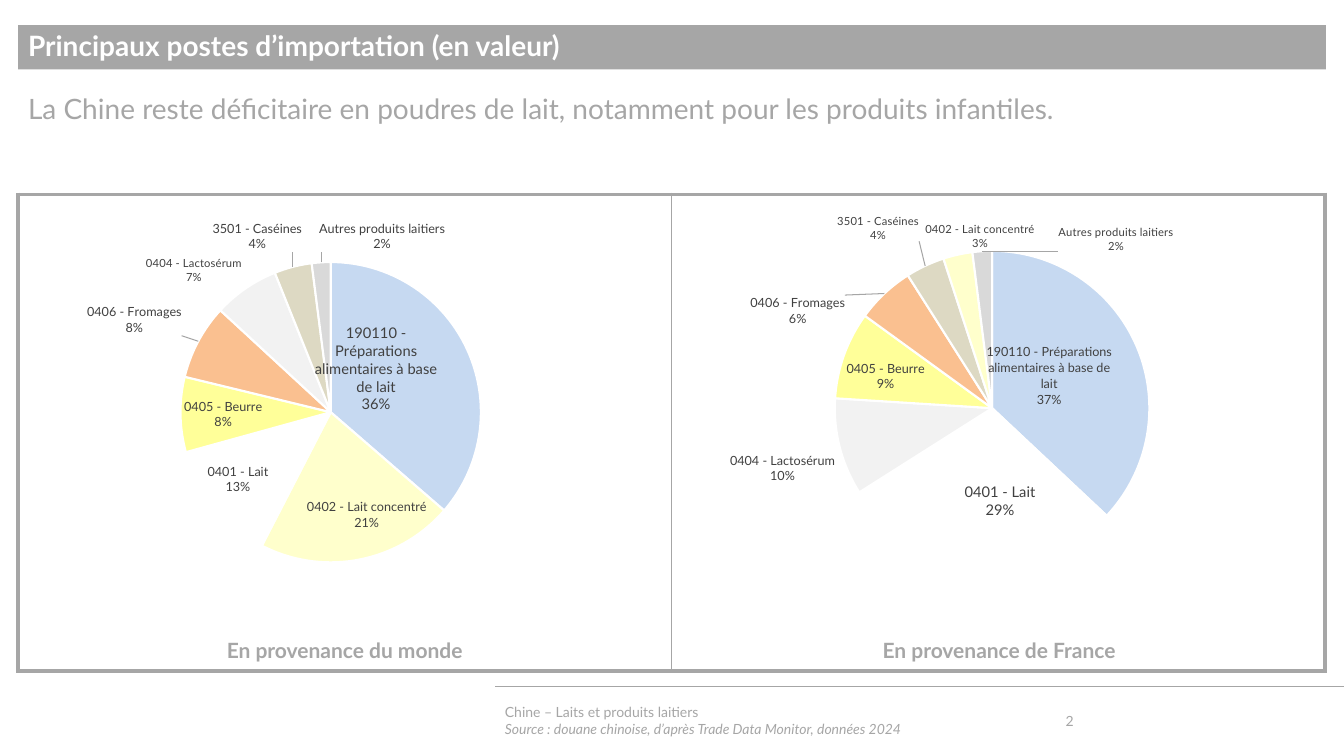
from dataclasses import dataclass
from itertools import accumulate
from math import copysign, cos, pi, sin
from typing import Optional

from pptx import Presentation
from pptx.chart.data import CategoryChartData
from pptx.dml.color import RGBColor
from pptx.enum.chart import XL_CHART_TYPE as ChartType
from pptx.enum.shapes import MSO_CONNECTOR as Connector, MSO_SHAPE as Shape
from pptx.enum.text import MSO_ANCHOR as Anchor, PP_ALIGN as Align
from pptx.oxml import parse_xml
from pptx.oxml.ns import nsdecls, qn
from pptx.util import Inches, Pt

FONT = "Lato"
COLORS = {
    "grey": "A6A6A6", "white": "FFFFFF", "black": "000000", "label": "404040",
    "infant": "C6D9F1", "condensed": "FFFFCC", "milk": "FFFFFF", "butter": "FFFF99",
    "cheese": "FAC090", "whey": "F2F2F2", "casein": "DDD9C3", "other": "D9D9D9",
}
PRODUCTS = {
    "infant": "190110 - Préparations alimentaires à base de lait",
    "condensed": "0402 - Lait concentré", "milk": "0401 - Lait",
    "butter": "0405 - Beurre", "cheese": "0406 - Fromages",
    "whey": "0404 - Lactosérum", "casein": "3501 - Caséines",
    "other": "Autres produits laitiers",
}
LABEL_GAP = 0.06  # between the pie and a label in its default place


@dataclass
class Label:
    """Centre on the slide and width in inches."""
    x: float
    y: float
    width: float
    size: float = 9
    lines: int = 2


@dataclass
class Slice:
    product: str
    value: float
    label: Optional[Label] = None


@dataclass
class Pie:
    left: float
    top: float
    width: float
    height: float
    x: float
    y: float
    radius: float
    slices: list[Slice]


WORLD = Pie(0.19, 1.93, 6.47, 4.16, 3.28, 4.09, 1.49, [
    Slice("infant", 0.36, Label(3.73, 3.66, 1.21, 10.5, 5)),
    Slice("condensed", 0.21, Label(3.64, 5.1, 1.19)),
    Slice("milk", 0.13, Label(2.36, 4.75, 0.6)),
    Slice("butter", 0.08, Label(2.21, 4.11, 0.78)),
    Slice("cheese", 0.08, Label(1.33, 3.18, 0.94)),
    Slice("whey", 0.07),
    Slice("casein", 0.04, Label(2.55, 2.35, 0.89)),
    Slice("other", 0.02, Label(3.79, 2.35, 1.25)),
])
FRANCE = Pie(6.66, 2.03, 6.48, 4.16, 9.84, 4.05, 1.56, [
    Slice("infant", 0.37, Label(10.4, 3.74, 1.23, lines=4)),
    Slice("milk", 0.29, Label(9.89, 4.97, 0.76, 10.5)),
    Slice("whey", 0.1, Label(7.76, 4.64, 1.04)),
    Slice("butter", 0.09, Label(8.78, 3.74, 0.78)),
    Slice("cheese", 0.06, Label(7.91, 3.09, 0.94)),
    Slice("casein", 0.04, Label(8.71, 2.26, 0.81, 8)),
    Slice("condensed", 0.03, Label(9.72, 2.34, 1.09, 8)),
    Slice("other", 0.02, Label(11.07, 2.37, 1.18, 8)),
])


def rgb(name: str) -> RGBColor:
    return RGBColor.from_string(COLORS[name])


def write(s, lines: list[str], size: float, color="grey", bold=False,
          align=Align.LEFT, anchor=Anchor.TOP, spacing=1.0):
    tf = s.text_frame
    tf.word_wrap = True
    tf.vertical_anchor = anchor
    tf.text = "\n".join(lines)
    for p in tf.paragraphs:
        p.alignment, p.line_spacing = align, spacing
        for r in p.runs:
            r.font.name, r.font.size, r.font.bold = FONT, Pt(size), bold
            r.font.color.rgb = rgb(color)
    return tf


def add_text(slide, box: tuple, lines: list[str], size: float, **style):
    return write(slide.shapes.add_textbox(*map(Inches, box)), lines, size, **style)


def set_borders(cell, widths: dict[str, float]):
    for side, width in widths.items():
        cell._tc.get_or_add_tcPr().append(parse_xml(
            f'<a:{side} {nsdecls("a")} w="{Pt(width)}"><a:solidFill>'
            f'<a:srgbClr val="{COLORS["grey"]}"/></a:solidFill></a:{side}>'))


def add_frame(slide):
    table = slide.shapes.add_table(
        1, 2, *map(Inches, (0.18, 1.93, 12.96, 4.73))).table
    table.first_row = table.horz_banding = False
    for cell, left, right in zip(table.rows[0].cells, (3, 1), (1, 3)):
        set_borders(cell, {"lnL": left, "lnR": right, "lnT": 3, "lnB": 3})
        cell.fill.background()


def layout_xml(inner: bool = False, **places: float) -> str:
    target = '<c:layoutTarget val="inner"/>' if inner else ""
    modes = '<c:xMode val="edge"/><c:yMode val="edge"/>' if inner else ""
    values = "".join(f'<c:{k} val="{v:.4f}"/>' for k, v in places.items())
    return (f'<c:layout {nsdecls("c")}><c:manualLayout>{target}{modes}{values}'
            '</c:manualLayout></c:layout>')


def label_format_xml(size: float) -> str:
    return (
        '<c:numFmt formatCode="0%" sourceLinked="0"/><c:spPr><a:noFill/></c:spPr>'
        '<c:txPr><a:bodyPr wrap="square"/><a:p><a:pPr>'
        f'<a:defRPr sz="{size * 100:.0f}" b="0"><a:solidFill><a:srgbClr val="{COLORS["label"]}"/>'
        f'</a:solidFill><a:latin typeface="{FONT}"/></a:defRPr></a:pPr>'
        '<a:endParaRPr lang="fr-FR"/></a:p></c:txPr><c:dLblPos val="bestFit"/>'
        '<c:showLegendKey val="0"/><c:showVal val="1"/><c:showCatName val="1"/>'
        '<c:showSerName val="0"/><c:showPercent val="0"/><c:showBubbleSize val="0"/>'
        '<c:separator>\n</c:separator>')


def label_layout_xml(pie: Pie, label: Label, angle: float) -> str:
    """Offset of a label from its default place just outside the slice."""
    def default(centre: float, direction: float, extent: float) -> float:
        side = copysign(0.5, direction) if abs(direction) > sin(pi / 36) else 0
        return centre + (pie.radius + LABEL_GAP) * direction + side * extent

    height = label.lines * label.size * 1.2 / 72
    x = default(pie.x, sin(angle), label.width)
    y = default(pie.y, -cos(angle), height)
    return layout_xml(x=(label.x - x) / pie.width, y=(label.y - y) / pie.height)


def labels_xml(pie: Pie) -> str:
    ends = list(accumulate(s.value for s in pie.slices))
    labels = ""
    for i, (part, end) in enumerate(zip(pie.slices, ends)):
        if part.label:
            angle = 2 * pi * (end - part.value / 2) / ends[-1]
            labels += (f'<c:dLbl><c:idx val="{i}"/>'
                       f'{label_layout_xml(pie, part.label, angle)}'
                       f'{label_format_xml(part.label.size)}</c:dLbl>')
    return (f'<c:dLbls {nsdecls("c", "a")}>{labels}{label_format_xml(8)}'
            '<c:showLeaderLines val="1"/><c:leaderLines><c:spPr><a:ln w="9525">'
            f'<a:solidFill><a:srgbClr val="{COLORS["grey"]}"/></a:solidFill></a:ln>'
            '</c:spPr></c:leaderLines></c:dLbls>')


def add_pie(slide, pie: Pie):
    data = CategoryChartData(number_format="0%")
    data.categories = [PRODUCTS[s.product] for s in pie.slices]
    data.add_series("Series 1", [s.value for s in pie.slices])
    box = map(Inches, (pie.left, pie.top, pie.width, pie.height))
    chart = slide.shapes.add_chart(ChartType.PIE, *box, data).chart
    chart.has_legend = chart.has_title = False
    chart.font.name, chart.font.size = FONT, Pt(8)
    chart.font.color.rgb = rgb("black")
    points = chart.plots[0].series[0].points
    for i, part in enumerate(pie.slices):
        fmt = points[i].format
        fmt.fill.solid()
        fmt.fill.fore_color.rgb = rgb(part.product)
        fmt.line.color.rgb = rgb("white")
        fmt.line.width = Pt(1.5)
    area = chart.element.find(".//" + qn("c:plotArea"))
    for old in area.findall(qn("c:layout")):
        area.remove(old)
    area.insert(0, parse_xml(layout_xml(
        inner=True,
        x=(pie.x - pie.radius - pie.left) / pie.width,
        y=(pie.y - pie.radius - pie.top) / pie.height,
        w=2 * pie.radius / pie.width, h=2 * pie.radius / pie.height)))
    for old in area.findall(".//" + qn("c:dLbls")):
        old.getparent().remove(old)
    area.find(".//" + qn("c:cat")).addprevious(parse_xml(labels_xml(pie)))


def main():
    prs = Presentation()
    prs.slide_width, prs.slide_height = Inches(13.33), Inches(7.5)
    slide = prs.slides.add_slide(prs.slide_layouts[6])

    rule = slide.shapes.add_connector(
        Connector.STRAIGHT, *map(Inches, (13.33, 6.81, 4.91, 6.81)))
    rule.line.color.rgb, rule.line.width = rgb("grey"), Pt(0.5)
    rule._element.spPr.append(parse_xml(f'<a:effectLst {nsdecls("a")}/>'))

    add_frame(slide)
    for left, origin in ((0.18, "du monde"), (6.67, "de France")):
        add_text(slide, (left, 6.28, 6.48, 0.35), [f"En provenance {origin}"], 15,
                 bold=True, align=Align.CENTER)

    footer = add_text(slide, (4.91, 6.95, 5.43, 0.4), [
        "Chine – Laits et produits laitiers",
        "Source : douane chinoise, d’après Trade Data Monitor, données 2024",
    ], 10, anchor=Anchor.MIDDLE)
    footer.paragraphs[1].runs[0].font.italic = True
    add_text(slide, (10.47, 6.95, 0.99, 0.4), ["2"], 10, anchor=Anchor.MIDDLE)

    title = slide.shapes.add_shape(
        Shape.RECTANGLE, *map(Inches, (0.18, 0.25, 12.97, 0.44)))
    title.shadow.inherit = False
    title.fill.solid()
    title.fill.fore_color.rgb = rgb("grey")
    title.line.fill.background()
    write(title, ["Principaux postes d’importation (en valeur)"], 20, color="white",
          bold=True, anchor=Anchor.MIDDLE, spacing=0.9)
    add_text(slide, (0.18, 0.9, 12.96, 0.81), [
        "La Chine reste déficitaire en poudres de lait, "
        "notamment pour les produits infantiles."], 20, spacing=0.9)

    for pie in (WORLD, FRANCE):
        add_pie(slide, pie)
    prs.save("out.pptx")


if __name__ == "__main__":
    main()
